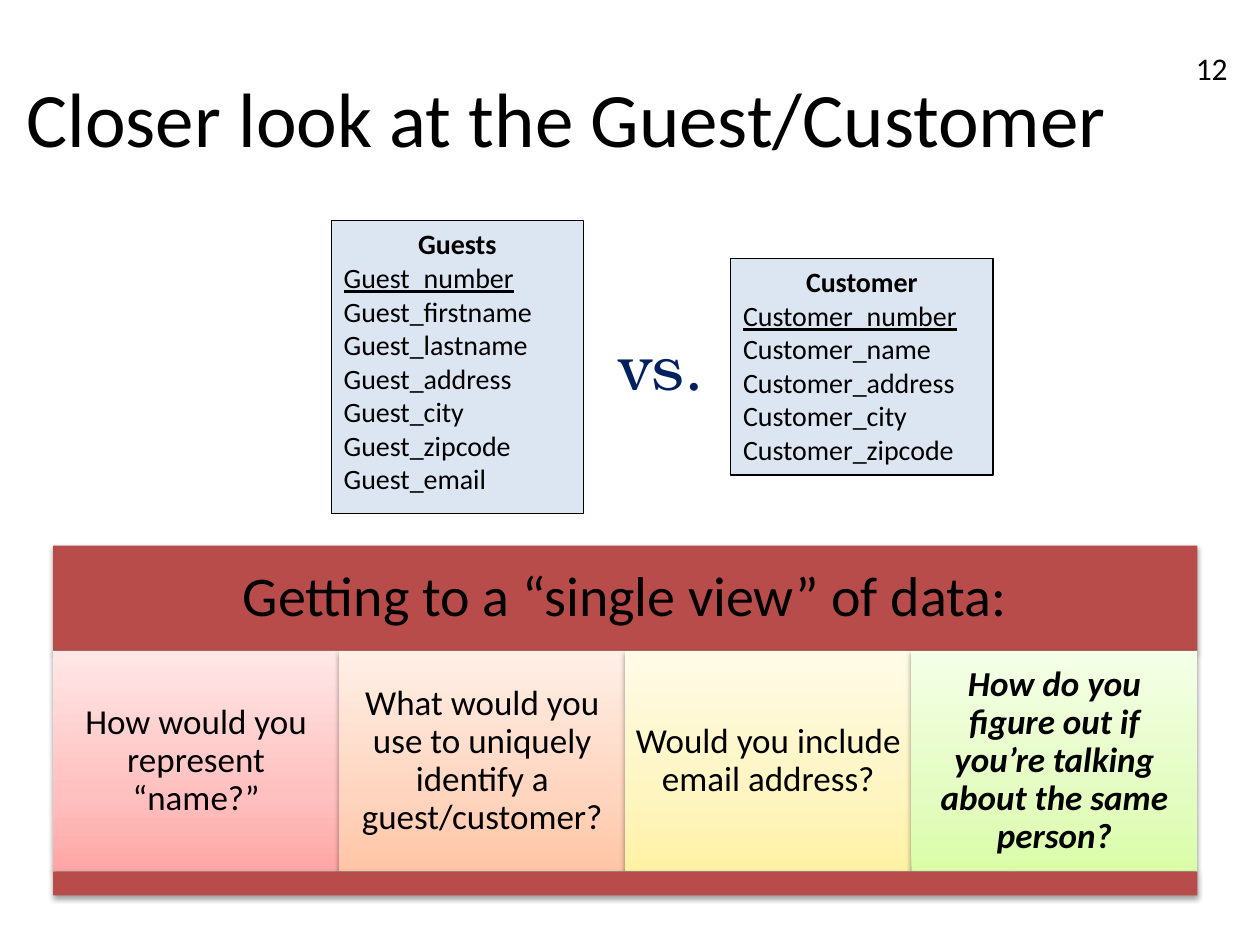
from lxml import etree
from pptx import Presentation
from pptx.dml.color import RGBColor
from pptx.enum import shapes, text
from pptx.oxml import parse_xml
from pptx.oxml.ns import nsdecls
from pptx.util import Cm, Pt

BLACK = RGBColor(0x00, 0x00, 0x00)
NAVY = RGBColor(0x00, 0x20, 0x60)
PALE_BLUE = RGBColor(0xDC, 0xE6, 0xF2)
BRICK = RGBColor(0xB7, 0x4C, 0x4A)
PINK = [RGBColor(0xFF, 0xA6, 0xA5), RGBColor(0xFF, 0xC0, 0xBF), RGBColor(0xFF, 0xE7, 0xE7)]
PEACH = [RGBColor(0xFF, 0xC5, 0xA5), RGBColor(0xFF, 0xD5, 0xBF), RGBColor(0xFF, 0xEF, 0xE7)]
YELLOW = [RGBColor(0xFF, 0xF2, 0xA5), RGBColor(0xFE, 0xF5, 0xC0), RGBColor(0xFF, 0xFB, 0xE7)]
GREEN = [RGBColor(0xDA, 0xFD, 0xA7), RGBColor(0xE4, 0xFC, 0xC2), RGBColor(0xF5, 0xFF, 0xE7)]


def style(paragraph, size, align, color=BLACK, font="Calibri"):
    paragraph.alignment = align
    for run in paragraph.runs:
        run.font.name = font
        run.font.size = Pt(size)
        run.font.color.rgb = color


def panel(left, top, width, height, fill, wording="", size=20, inset=0.2):
    """Shadowed rectangle, filled with one colour or a three-stop gradient."""
    box = slide.shapes.add_shape(shapes.MSO_SHAPE.RECTANGLE, Cm(left), Cm(top), Cm(width), Cm(height))
    box.line.fill.background()
    properties = box._element.spPr
    if isinstance(fill, list):
        stops = "".join(f'<a:gs pos="{position}000"><a:srgbClr val="{color}"/></a:gs>'
                        for position, color in zip((0, 35, 100), fill))
        gradient = parse_xml(f'<a:gradFill {nsdecls("a")} rotWithShape="1"><a:gsLst>{stops}</a:gsLst>'
                             '<a:lin ang="16200000" scaled="0"/></a:gradFill>')
        properties.prstGeom.addnext(gradient)
    else:
        box.fill.solid()
        box.fill.fore_color.rgb = fill
    properties.append(etree.fromstring(
        f'<a:effectLst {nsdecls("a")}><a:outerShdw blurRad="{Pt(3.1)}" dist="{Pt(1.6)}" dir="5400000" '
        'rotWithShape="0"><a:srgbClr val="000000"><a:alpha val="38000"/></a:srgbClr>'
        '</a:outerShdw></a:effectLst>'))
    frame = box.text_frame
    frame.word_wrap = True
    frame.vertical_anchor = text.MSO_ANCHOR.MIDDLE
    frame.margin_left = frame.margin_right = frame.margin_top = frame.margin_bottom = Cm(inset)
    frame.text = wording
    frame.paragraphs[0].line_spacing = 0.9
    style(frame.paragraphs[0], size, text.PP_ALIGN.CENTER)
    return box


prs = Presentation()
prs.slide_width, prs.slide_height = Cm(25.4), Cm(19.05)
slide = prs.slides.add_slide(prs.slide_layouts[5])

# Slide number
number = slide.shapes.add_textbox(Cm(20.75), Cm(0.85), Cm(4.25), Cm(1.02)).text_frame
number.word_wrap = True
number.vertical_anchor = text.MSO_ANCHOR.MIDDLE
number.text = "12"
style(number.paragraphs[0], 18, text.PP_ALIGN.RIGHT)

# Title
title = slide.shapes.title
title.left, title.top, title.width, title.height = Cm(0), Cm(0.76), Cm(22.86), Cm(3.18)
title.text_frame.text = "Closer look at the Guest/Customer"
title.text_frame.vertical_anchor = text.MSO_ANCHOR.MIDDLE
style(title.text_frame.paragraphs[0], 44, text.PP_ALIGN.CENTER)

# The two entities: name, underlined key, attributes
entities = [
    ("Guests", "Guest", "number firstname lastname address city zipcode email", (6.68, 4.45, 5.08, 5.9)),
    ("Customer", "Customer", "number name address city zipcode", (14.73, 5.21, 5.29, 4.37)),
]
for heading, prefix, attributes, place in entities:
    entity = slide.shapes.add_shape(shapes.MSO_SHAPE.RECTANGLE, *map(Cm, place))
    entity.shadow.inherit = False
    entity.fill.solid()
    entity.fill.fore_color.rgb = PALE_BLUE
    entity.line.color.rgb = BLACK
    entity.line.width = Pt(0.75)
    frame = entity.text_frame
    frame.word_wrap = True
    frame.auto_size = text.MSO_AUTO_SIZE.SHAPE_TO_FIT_TEXT
    frame.vertical_anchor = text.MSO_ANCHOR.TOP
    frame.text = "\n".join([heading] + [f"{prefix}_{name}" for name in attributes.split()])
    for paragraph in frame.paragraphs:
        style(paragraph, 16, text.PP_ALIGN.LEFT)
    name, key = frame.paragraphs[:2]
    name.alignment = text.PP_ALIGN.CENTER
    name.runs[0].font.bold = True
    key.runs[0].font.underline = True

# Questions under a banner, closed by a bar
LEFT, WIDTH = 1.07, 23.07
BANNER_TOP, BANNER_HEIGHT, TILE_HEIGHT = 11.0, 2.12, 4.45
tile_top = BANNER_TOP + BANNER_HEIGHT
questions = [
    ("How would you represent “name?”", PINK),
    ("What would you use to uniquely identify a guest/customer?", PEACH),
    ("Would you include email address?", YELLOW),
    ("How do you figure out if you’re talking about the same person?", GREEN),
]
tile_width = WIDTH / len(questions)
panel(LEFT, BANNER_TOP, WIDTH, BANNER_HEIGHT, BRICK, "Getting to a “single view” of data:", 32, 0.33)
for column, (question, colors) in enumerate(questions):
    tile = panel(LEFT + column * tile_width, tile_top, tile_width, TILE_HEIGHT, colors, question)
key_question = tile.text_frame.paragraphs[0].runs[0].font
key_question.bold = key_question.italic = True
panel(LEFT, tile_top + TILE_HEIGHT, WIDTH, 0.48, BRICK)

# Versus
versus = slide.shapes.add_textbox(Cm(12.24), Cm(6.48), Cm(2.29), Cm(1.8)).text_frame
versus.word_wrap = False
versus.auto_size = text.MSO_AUTO_SIZE.SHAPE_TO_FIT_TEXT
versus.text = "vs."
style(versus.paragraphs[0], 36, text.PP_ALIGN.LEFT, NAVY, "TeX Gyre Bonum")

prs.save("out.pptx")
